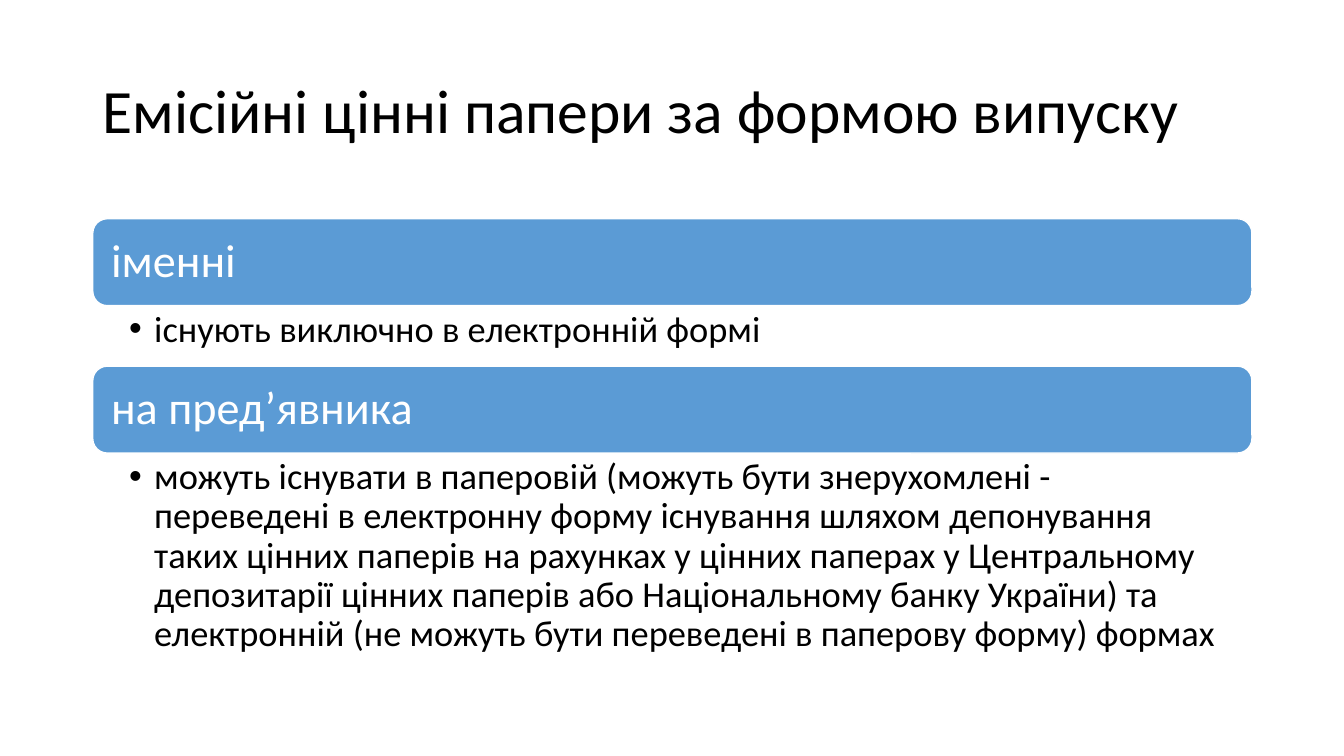
from dataclasses import dataclass

from lxml import etree
from pptx import Presentation
from pptx.dml.color import RGBColor
from pptx.enum.shapes import MSO_SHAPE
from pptx.enum.text import MSO_ANCHOR, PP_ALIGN
from pptx.oxml.ns import qn
from pptx.util import Inches, Pt

ROUND_RECT = MSO_SHAPE.ROUNDED_RECTANGLE
TOP, MIDDLE = MSO_ANCHOR.TOP, MSO_ANCHOR.MIDDLE
LEFT = PP_ALIGN.LEFT

SLIDE_W, SLIDE_H = Inches(13.33), Inches(7.5)
COL, ROW = SLIDE_W / 100, SLIDE_H / 100
MARGIN, SPAN = 6.9, 86.25
TITLE_TOP, TITLE_ROWS = 5.33, 19.33
LIST_TOP, HEADING_ROWS = 28.93, 11.5


@dataclass(frozen=True)
class Theme:
    font: str = "Calibri"
    ink: RGBColor = RGBColor(0x00, 0x00, 0x00)
    paper: RGBColor = RGBColor(0xFF, 0xFF, 0xFF)
    accent: RGBColor = RGBColor(0x5B, 0x9B, 0xD5)
    title_size: float = 44
    heading_size: float = 33
    detail_size: float = 26


THEME = Theme()

SECTIONS = [
    ("іменні", "існують виключно в електронній формі", 8),
    (
        "на пред’явника",
        "можуть існувати в паперовій (можуть бути знерухомлені - "
        "переведені в електронну форму існування шляхом депонування "
        "таких цінних паперів на рахунках у цінних паперах у Центральному "
        "депозитарії цінних паперів або Національному банку України) та "
        "електронній (не можуть бути переведені в паперову форму) формах",
        27.87,
    ),
]


def apply(target, values):
    for name, value in values.items():
        setattr(target, name, value)


def band(top, rows):
    return [round(v) for v in (MARGIN * COL, top * ROW, SPAN * COL, rows * ROW)]


def add_bullet(p):
    pPr = p._p.get_or_add_pPr()
    indent = Inches(0.25)
    pPr.set("marL", str(indent))
    pPr.set("indent", str(-indent))
    etree.SubElement(pPr, qn("a:buFont"), typeface="Arial")
    etree.SubElement(pPr, qn("a:buChar"), char="•")


def write(sp, text, size, color, anchor, insets, after=0, bullet=False):
    tf = sp.text_frame
    sides = ("margin_left", "margin_top", "margin_right", "margin_bottom")
    apply(tf, {"word_wrap": True, "vertical_anchor": anchor})
    apply(tf, dict(zip(sides, map(Inches, insets))))
    p = tf.paragraphs[0]
    apply(p, {"alignment": LEFT, "line_spacing": 0.9, "space_after": Pt(after)})
    if bullet:
        add_bullet(p)
    r = p.add_run()
    r.text = text
    apply(r.font, {"name": THEME.font, "size": Pt(size)})
    r.font.color.rgb = color


def add_title(slide, text):
    sp = slide.shapes.add_textbox(*band(TITLE_TOP, TITLE_ROWS))
    write(sp, text, THEME.title_size, THEME.ink, MIDDLE, (0.1, 0.05, 0.1, 0.05))


def add_heading(slide, text, top):
    sp = slide.shapes.add_shape(ROUND_RECT, *band(top, HEADING_ROWS))
    sp.shadow.inherit = False
    sp.fill.solid()
    sp.fill.fore_color.rgb = THEME.accent
    sp.line.color.rgb = THEME.paper
    sp.line.width = Pt(1)
    write(sp, text, THEME.heading_size, THEME.paper, MIDDLE, (0.14,) * 4, 11.5)


def add_detail(slide, text, top, rows):
    sp = slide.shapes.add_textbox(*band(top, rows))
    write(sp, text, THEME.detail_size, THEME.ink, TOP,
          (0.36, 0.05, 0.26, 0.05), 5.2, bullet=True)


def main():
    prs = Presentation()
    apply(prs, {"slide_width": SLIDE_W, "slide_height": SLIDE_H})
    slide = prs.slides.add_slide(prs.slide_layouts[6])
    add_title(slide, "Емісійні цінні папери за формою випуску")
    top = LIST_TOP
    for heading, detail, rows in SECTIONS:
        add_heading(slide, heading, top)
        add_detail(slide, detail, top + HEADING_ROWS, rows)
        top += HEADING_ROWS + rows
    prs.save("out.pptx")


if __name__ == "__main__":
    main()
